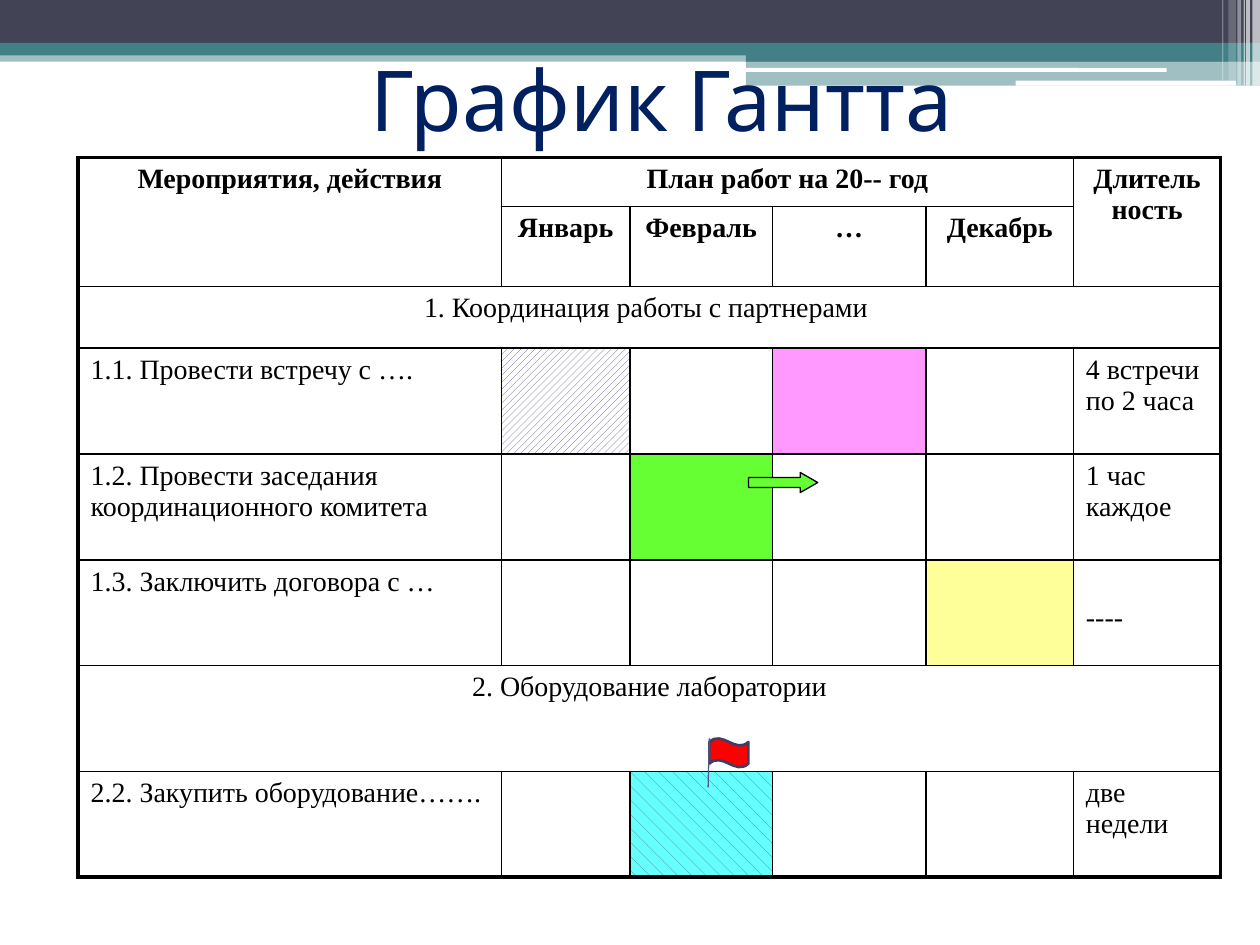
import pptx
import pptx.util
import pptx.dml.color
import pptx.enum.dml
import pptx.enum.shapes
import pptx.enum.text
import pptx.oxml
import pptx.oxml.ns
from lxml import etree

Inches, Pt = pptx.util.Inches, pptx.util.Pt
SHAPE = pptx.enum.shapes.MSO_SHAPE
PATTERN = pptx.enum.dml.MSO_PATTERN
ALIGN = pptx.enum.text.PP_ALIGN
ANCHOR = pptx.enum.text.MSO_ANCHOR
qn = pptx.oxml.ns.qn

# Content
TITLE = "График Гантта"
FONT, SIZE = "Times New Roman", 16
COLS = [3.36, 1.02, 1.13, 1.22, 1.17, 1.17]
ROWS = [0.39, 0.6, 0.49] + [0.84] * 5
CELLS = [
    ["Мероприятия, действия", "План работ на 20-- год", "", "", "", "Длительность"],
    ["", "Январь", "Февраль", "…", "Декабрь", ""],
    ["1. Координация работы с партнерами "],
    ["1.1. Провести встречу с ….", "", "", "", "", "4 встречи по 2 часа"],
    ["1.2. Провести заседания координационного комитета", "", "", "", "", "1 час каждое"],
    ["1.3. Заключить договора с …", "", "", "", "", "----"],
    ["2. Оборудование лаборатории"],
    ["2.2. Закупить оборудование…….", "", "", "", "", "две недели"],
]
HEADER_ROWS, SECTION_ROWS = (0, 1), (2, 6)
SPANS = {(0, 0): (2, 1), (0, 1): (1, 4), (0, 5): (2, 1), (2, 0): (1, 6), (6, 0): (1, 6)}
BARS = {  # (row, column): colour, pattern, pattern colour
    (3, 1): ("FFFFFF", PATTERN.WIDE_UPWARD_DIAGONAL, "53548A"),
    (3, 3): ("FF99FF", None, None),
    (4, 2): ("66FF33", None, None),
    (5, 4): ("FFFF99", None, None),
    (7, 2): ("66FFFF", PATTERN.SHINGLE, "438086"),
}
LOWERED = (5, 5)  # the dashes sit one line down

# Header decoration: left, top, width, height, colour, opacity %
BANDS = [
    (0, 0.4, 10, 0.09, "438086", 50),
    (0, 0, 10, 0.34, "424456", 100),
    (0, 0.34, 10, 0.1, "438086", 100),
    (5.92, 0.39, 4.08, 0.1, "438086", 100),
    (5.92, 0.48, 4.08, 0.2, "438086", 50),
]
ROUNDED = [(5.91, 0.54, 3.35, 0.03), (8.06, 0.64, 1.75, 0.04)]
STRIPES = [  # left, width, height, opacity %
    (9.94, 0.06, 0.68, 65), (9.89, 0.03, 0.68, 65), (9.87, 0.01, 0.68, 60),
    (9.82, 0.03, 0.68, 40), (9.75, 0.06, 0.64, 20), (9.7, 0.01, 0.64, 30),
]


def rgb(color):
    return pptx.dml.color.RGBColor.from_string(color)


def add_shape(s, kind, box, color, opacity=100, line=None, width=0):
    sp = s.shapes.add_shape(kind, *map(Inches, box))
    sp.shadow.inherit = False
    sp.fill.solid()
    sp.fill.fore_color.rgb = rgb(color)
    if opacity < 100:
        clr = sp.fill._xPr.find(".//" + qn("a:srgbClr"))
        etree.SubElement(clr, qn("a:alpha"), val=str(opacity * 1000))
    if line:
        sp.line.color.rgb = rgb(line)
        sp.line.width = Pt(width)
    else:
        sp.line.fill.background()
    return sp


def add_run(p, text, font, size, color, bold=False):
    r = p.add_run()
    r.text = text
    r.font.name, r.font.size, r.font.bold = font, Pt(size), bold
    r.font.color.rgb = rgb(color)


def set_borders(cell, outer):
    tcPr = cell._tc.get_or_add_tcPr()
    for side in "LRTB":
        width = 2.25 if side in outer else 1
        ln = etree.SubElement(tcPr, qn("a:ln" + side), w=str(Pt(width)))
        fill = etree.SubElement(ln, qn("a:solidFill"))
        etree.SubElement(fill, qn("a:srgbClr"), val="000000")


def set_fill(fill, color, pattern, fore):
    if pattern is None:
        fill.solid()
        fill.fore_color.rgb = rgb(color)
    else:
        fill.patterned()
        fill.pattern = pattern
        fill.fore_color.rgb = rgb(fore)
        fill.back_color.rgb = rgb(color)


def add_gantt(s):
    tbl = s.shapes.add_table(len(ROWS), len(COLS), Inches(0.62), Inches(1.25),
                             Inches(sum(COLS)), Inches(sum(ROWS))).table
    tbl.first_row = tbl.horz_banding = False
    for i, w in enumerate(COLS):
        tbl.columns[i].width = Inches(w)
    for i, h in enumerate(ROWS):
        tbl.rows[i].height = Inches(h)
    for (row, col), (down, across) in SPANS.items():
        tbl.cell(row, col).merge(tbl.cell(row + down - 1, col + across - 1))

    for row, texts in enumerate(CELLS):
        for col in range(len(COLS)):
            cell = tbl.cell(row, col)
            down, across = SPANS.get((row, col), (1, 1))
            edges = {"L": col == 0, "R": col + across == len(COLS),
                     "T": row == 0, "B": row + down == len(ROWS)}
            set_borders(cell, [side for side, on in edges.items() if on])
            if (row, col) in BARS:
                set_fill(cell.fill, *BARS[row, col])
            else:
                cell.fill.background()
            if (row, col) == LOWERED:
                cell.margin_top = Inches(0.34)
            p = cell.text_frame.paragraphs[0]
            text = texts[col] if col < len(texts) else ""
            if text:
                if row in HEADER_ROWS + SECTION_ROWS:
                    p.alignment = ALIGN.CENTER
                add_run(p, text, FONT, SIZE, "000000", row in HEADER_ROWS)
            else:
                etree.SubElement(p._p, qn("a:endParaRPr"), sz=str(SIZE * 100))


prs = pptx.Presentation()
prs.slide_width, prs.slide_height = Inches(10), Inches(7.5)
s = prs.slides.add_slide(prs.slide_layouts[6])

# Header decoration
for *box, color, opacity in BANDS:
    add_shape(s, SHAPE.RECTANGLE, box, color, opacity)
for box in ROUNDED:
    add_shape(s, SHAPE.ROUNDED_RECTANGLE, box, "FFFFFF")
for left, width, height, opacity in STRIPES:
    add_shape(s, SHAPE.RECTANGLE, (left, 0, width, height), "FFFFFF", opacity)

# Title
tf = s.shapes.add_textbox(*map(Inches, (1, 0.3, 8.5, 0.95))).text_frame
tf.word_wrap = True
tf.vertical_anchor = ANCHOR.MIDDLE
tf.paragraphs[0].alignment = ALIGN.CENTER
add_run(tf.paragraphs[0], TITLE, "Cabin", 48, "002060")

# Chart table
add_gantt(s)

# Continuation arrow and milestone flag
arrow = add_shape(s, SHAPE.RIGHT_ARROW, (5.94, 3.75, 0.55, 0.16), "66FF33",
                  line="000000", width=0.75)
arrow.adjustments[1] = 0.87
add_shape(s, SHAPE.WAVE, (5.63, 5.86, 0.31, 0.23), "FF0000", line="3D3E66", width=1.5)
pole = s.shapes.add_connector(pptx.enum.shapes.MSO_CONNECTOR.STRAIGHT,
                              *map(Inches, (5.63, 5.86, 5.62, 6.25)))
pole.line.color.rgb = rgb("53548A")
pole.line.width = Pt(0.75)
etree.SubElement(pole._element.spPr, qn("a:effectLst"))

prs.save("out.pptx")
